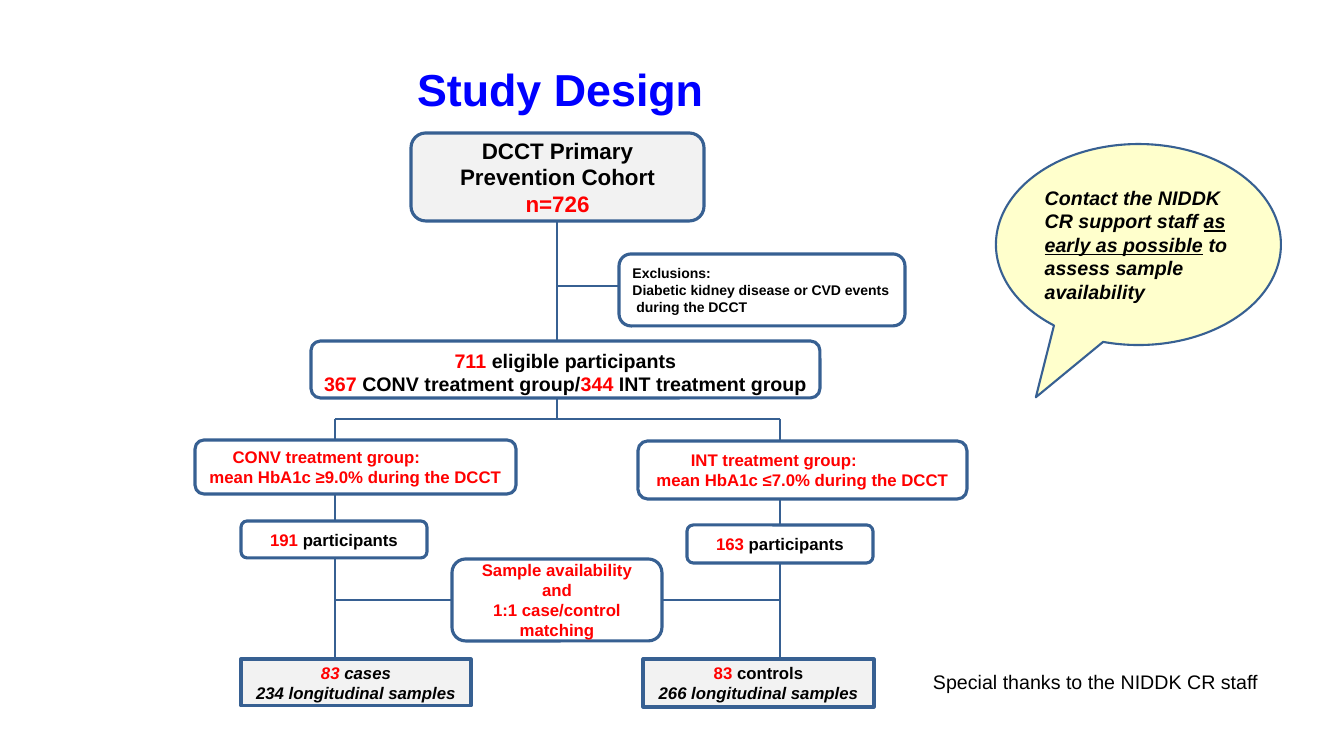
from dataclasses import dataclass

from lxml.etree import SubElement
from pptx import Presentation
from pptx.dml.color import RGBColor
from pptx.enum.shapes import MSO_CONNECTOR, MSO_SHAPE
from pptx.enum.text import MSO_ANCHOR, PP_ALIGN
from pptx.oxml.ns import qn
from pptx.util import Emu, Pt


@dataclass(frozen=True)
class Theme:
    font: str = "Arial"
    ink: str = "000000"
    red: str = "FF0000"
    title: str = "0000FF"
    edge: str = "376092"
    grey: str = "F2F2F2"
    white: str = "FFFFFF"
    yellow: str = "FFFFCC"
    title_size: int = 32
    cohort_size: int = 16
    large: int = 14
    body: int = 12
    small: int = 10
    box_line: float = 2.25
    flow_line: float = 2
    callout_line: float = 1.5


THEME = Theme()
SLIDE = (1344, 756)
ROUND, RECT = MSO_SHAPE.ROUNDED_RECTANGLE, MSO_SHAPE.RECTANGLE

# Content: a paragraph is a list of (text, marks); marks: r red, i italic, u underline
TITLE = [[("Study Design", "")]]
THANKS = [[("Special thanks to the NIDDK CR staff", "")]]
ADVICE = [[("Contact the NIDDK CR support staff ", "i"),
           ("as early as possible", "iu"),
           (" to assess sample availability", "i")]]

# Each box: preset, (left, top, width, height), fill, paragraphs, text format
BOXES = [
    (ROUND, (411, 133, 293, 88), THEME.grey,
     [[("DCCT Primary Prevention Cohort", "")], [("n=726", "r")]],
     dict(size=THEME.cohort_size)),
    (ROUND, (619, 254, 286, 72), THEME.white,
     [[("Exclusions:", "")],
      [("Diabetic kidney disease or CVD events\v during the DCCT", "")]],
     dict(size=THEME.small, align=PP_ALIGN.LEFT)),
    (ROUND, (311, 341, 509, 57), THEME.white,
     [[("711 ", "r"), ("eligible participants", "")],
      [("367 ", "r"), ("CONV treatment group/", ""), ("344", "r"),
       (" INT treatment group", "")]],
     dict(size=THEME.large, anchor=MSO_ANCHOR.TOP, inset=(6, 5))),
    (ROUND, (195, 440, 321, 54), THEME.white,
     [[("CONV treatment group:", "r")],
      [("mean HbA1c ≥9.0% during the DCCT", "r")]],
     dict(first_indent=25)),
    (ROUND, (638, 441, 329, 58), THEME.white,
     [[("INT treatment group:", "r")],
      [("mean HbA1c ≤7.0% during the DCCT", "r")]],
     dict(first_indent=40)),
    (ROUND, (241, 521, 186, 37), THEME.white,
     [[("191 ", "r"), ("participants", "")]], {}),
    (ROUND, (687, 525, 186, 38), THEME.white,
     [[("163 ", "r"), ("participants", "")]], {}),
    (ROUND, (452, 559, 210, 82), THEME.white,
     [[("Sample availability", "r")], [("and", "r")],
      [("1:1 case/control matching", "r")]], {}),
    (RECT, (241, 659, 230, 47), THEME.grey,
     [[("83 ", "ri"), ("cases", "i")], [("234 longitudinal samples", "i")]], {}),
    (RECT, (643, 659, 231, 48), THEME.grey,
     [[("83 ", "r"), ("controls", "")], [("266 longitudinal samples", "i")]], {}),
]

# Flow lines: the trunk, the split, and the two arms
TRUNK_X, ARM_XS = 557, (335, 780)
SPLIT_Y, MATCH_Y = 419, 600
FLOW = [
    (TRUNK_X, 221, TRUNK_X, 341),
    (TRUNK_X, 286, 619, 286),
    (TRUNK_X, 398, TRUNK_X, SPLIT_Y),
    (ARM_XS[0], SPLIT_Y, ARM_XS[1], SPLIT_Y),
    (ARM_XS[0], MATCH_Y, 452, MATCH_Y),
    (662, MATCH_Y, ARM_XS[1], MATCH_Y),
]
for arm_x in ARM_XS:
    FLOW += [(arm_x, SPLIT_Y, arm_x, 441),
             (arm_x, 494, arm_x, 525),
             (arm_x, 558, arm_x, 659)]


def px(length):
    return Emu(round(length * 914400 / 100.8))


def rgb(colour):
    return RGBColor.from_string(colour)


def write(shape, paragraphs, *, size=THEME.body, colour=THEME.ink, bold=True,
          align=PP_ALIGN.CENTER, anchor=MSO_ANCHOR.MIDDLE, inset=(10, 5),
          first_indent=None):
    frame = shape.text_frame
    frame.word_wrap = True
    frame.vertical_anchor = anchor
    frame.margin_left = frame.margin_right = px(inset[0])
    frame.margin_top = frame.margin_bottom = px(inset[1])
    for index, runs in enumerate(paragraphs):
        para = frame.add_paragraph() if index else frame.paragraphs[0]
        para.alignment = align
        if index == 0 and first_indent is not None:
            para.alignment = PP_ALIGN.LEFT
            properties = para._p.get_or_add_pPr()
            properties.set("marL", str(px(first_indent)))
            properties.set("indent", "0")
        for text, marks in runs:
            for part, piece in enumerate(text.split("\v")):
                if part:
                    para.add_line_break()
                span = para.add_run()
                span.text = piece
                font = span.font
                font.name, font.size, font.bold = THEME.font, Pt(size), bold
                font.italic, font.underline = "i" in marks, "u" in marks
                font.color.rgb = rgb(THEME.red if "r" in marks else colour)


def add_box(page, preset, place, fill, line_width):
    box = page.shapes.add_shape(preset, *map(px, place))
    box.shadow.inherit = False
    box.fill.solid()
    box.fill.fore_color.rgb = rgb(fill)
    box.line.color.rgb = rgb(THEME.edge)
    box.line.width = Pt(line_width)
    return box


def add_flow(page, ends):
    flow = page.shapes.add_connector(MSO_CONNECTOR.STRAIGHT, *map(px, ends))
    flow.line.color.rgb = rgb(THEME.edge)
    flow.line.width = Pt(THEME.flow_line)
    SubElement(flow._element.spPr, qn("a:effectLst"))


def add_label(page, place, paragraphs, **text_format):
    label = page.shapes.add_textbox(*map(px, place))
    write(label, paragraphs, align=PP_ALIGN.LEFT, anchor=MSO_ANCHOR.TOP,
          **text_format)


def main():
    deck = Presentation()
    deck.slide_width, deck.slide_height = map(px, SLIDE)
    page = deck.slides.add_slide(deck.slide_layouts[6])

    # Flow chart: lines lie beneath the boxes
    for ends in FLOW:
        add_flow(page, ends)
    for preset, place, fill, paragraphs, text_format in BOXES:
        write(add_box(page, preset, place, fill, THEME.box_line),
              paragraphs, **text_format)

    # Title and thanks
    add_label(page, (406, 56, 345, 66), TITLE, size=THEME.title_size,
              colour=THEME.title, inset=(11, 6))
    add_label(page, (923, 665, 347, 34), THANKS, size=THEME.large, bold=False)

    # Advice callout
    callout = add_box(page, MSO_SHAPE.OVAL_CALLOUT, (996, 144, 285, 201),
                      THEME.yellow, THEME.callout_line)
    callout.adjustments[0], callout.adjustments[1] = -0.36, 0.76
    write(callout, ADVICE, size=THEME.large, align=PP_ALIGN.LEFT, inset=(7, 0))

    deck.save("out.pptx")


if __name__ == "__main__":
    main()
